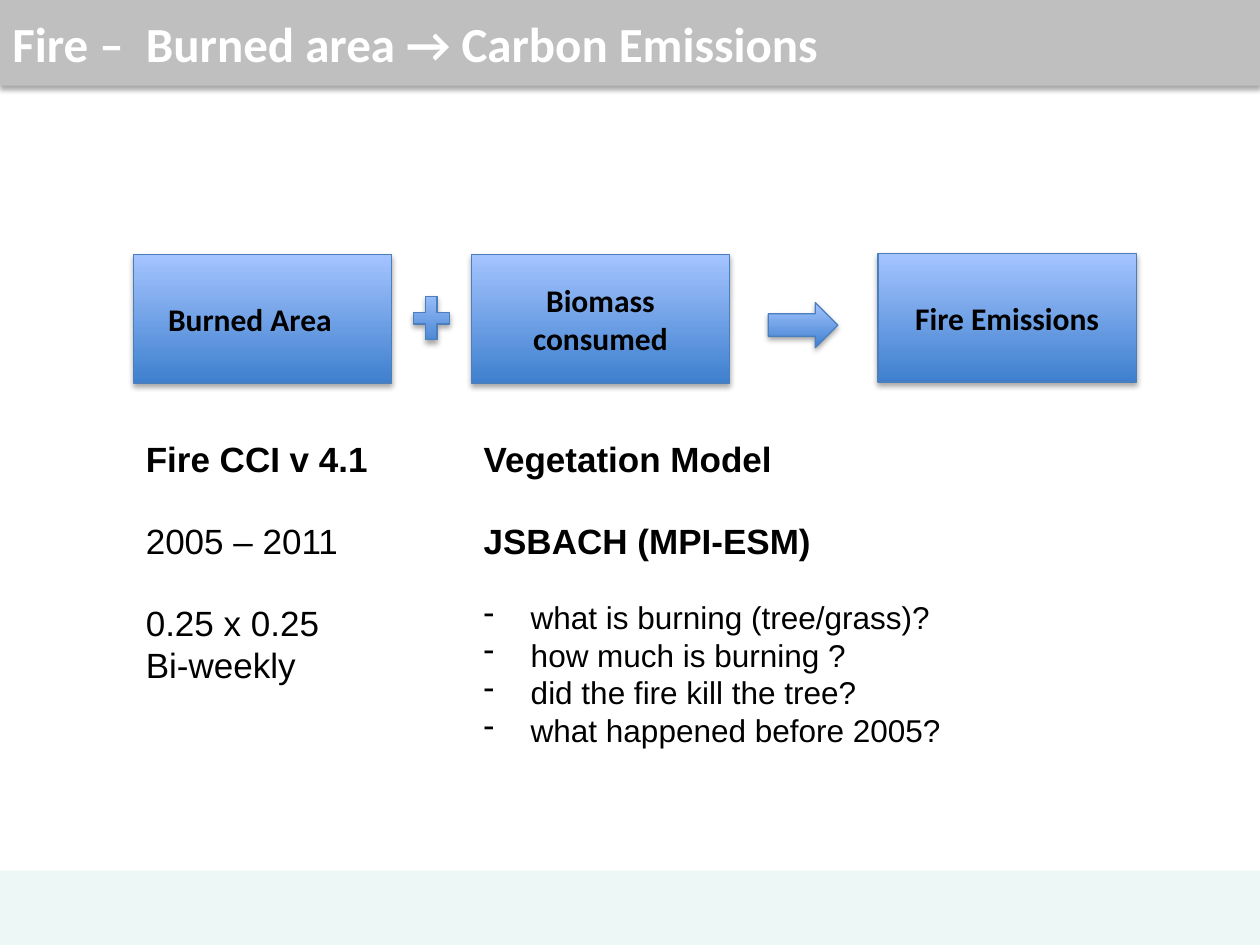
from lxml import etree
from pptx import Presentation
from pptx import util as u
from pptx.dml import color as col
from pptx.enum import shapes, text
from pptx.oxml import ns

HUE = {"bar": "BFBFBF", "foot": "EDF8F6", "deep": "3F80CE", "pale": "A4C4FF",
       "edge": "4B7EBC", "ink": "000000", "white": "FFFFFF"}
RGB = {name: col.RGBColor.from_string(code) for name, code in HUE.items()}
KIND = shapes.MSO_SHAPE

deck = Presentation()
deck.slide_width, deck.slide_height = u.Cm(25.4), u.Cm(19.05)
slide = deck.slides.add_slide(deck.slide_layouts[6])


def draw(kind, left, top, width, height, fill=None, shade=True):
    """Add a shape: flat if a fill is named, else a blue gradient with an edge."""
    shape = slide.shapes.add_shape(kind, *map(u.Cm, (left, top, width, height)))
    shape.shadow.inherit = False
    if fill:
        shape.fill.solid()
        shape.fill.fore_color.rgb = RGB[fill]
        shape.line.fill.background()
    else:
        shape.fill.gradient()
        shape.fill.gradient_angle = 90
        for stop, name in zip(shape.fill.gradient_stops, ("deep", "pale")):
            stop.color.rgb = RGB[name]
        shape.line.color.rgb = RGB["edge"]
        shape.line.width = u.Pt(0.75)
    if shade:
        effect = shape.element.spPr.find(ns.qn("a:effectLst"))
        outer = etree.SubElement(effect, ns.qn("a:outerShdw"), blurRad="40000",
                                 dist="23000", dir="5400000", rotWithShape="0")
        tint = etree.SubElement(outer, ns.qn("a:srgbClr"), val=HUE["ink"])
        etree.SubElement(tint, ns.qn("a:alpha"), val="35000")
    return shape


def style(para, face, size, bold, ink="ink"):
    font = para.font
    font.name, font.size, font.bold = face, u.Pt(size), bold
    font.color.rgb = RGB[ink]


# Footer band and title bar
draw(KIND.RECTANGLE, 0, 17.55, 25.4, 1.5, "foot", shade=False)
bar = draw(KIND.RECTANGLE, 0, 0, 25.4, 1.73, "bar")
para = bar.text_frame.paragraphs[0]
para.text = "Fire –  Burned area → Carbon Emissions"
para.alignment = text.PP_ALIGN.LEFT
style(para, "Calibri", 28, True, "white")

# Boxes of the flow; the first label sits a little left of centre
for label, left, top, inset in (("Burned Area", 2.69, 5.13, 0.76),
                                ("Biomass consumed", 9.5, 5.13, 0.25),
                                ("Fire Emissions", 17.7, 5.11, 0.25)):
    box = draw(KIND.RECTANGLE, left, top, 5.21, 2.59)
    box.text_frame.margin_right = u.Cm(inset)
    para = box.text_frame.paragraphs[0]
    para.text = label
    para.alignment = text.PP_ALIGN.CENTER
    style(para, "Calibri", 18, True)

# Signs between the boxes
draw(KIND.MATH_PLUS, 8.2, 5.82, 0.99, 1.19)
draw(KIND.RIGHT_ARROW, 15.49, 6.1, 1.4, 0.91)

# Notes below: text, size, bold, space before, dash
model = [("Vegetation Model", 20, True, 0, False),
         ("JSBACH (MPI-ESM)", 20, True, 23, False),
         ("what is burning (tree/grass)?", 18, False, 20.7, True),
         ("how much is burning ?", 18, False, 0, True),
         ("did the fire kill the tree?", 18, False, 0, True),
         ("what happened before 2005?", 18, False, 0, True)]
data = [("Fire CCI v 4.1", 20, True, 0, False),
        ("2005 – 2011", 20, False, 23, False),
        ("0.25 x 0.25", 20, False, 23, False),
        ("Bi-weekly", 20, False, 0, False)]
for left, width, height, lines in ((9.5, 10.5, 6.7, model), (2.69, 6, 5.4, data)):
    note = slide.shapes.add_textbox(*map(u.Cm, (left, 8.69, width, height)))
    frame = note.text_frame
    frame.word_wrap = True
    for i, (words, size, bold, gap, dash) in enumerate(lines):
        para = frame.add_paragraph() if i else frame.paragraphs[0]
        para.text = words
        if gap:
            para.space_before = u.Pt(gap)
        if dash:
            props = para._p.get_or_add_pPr()
            props.set("marL", str(u.Cm(0.95)))
            props.set("indent", str(u.Cm(-0.95)))
            etree.SubElement(props, ns.qn("a:buChar"), char="-")
        style(para, "Arial", size, bold)

deck.save("out.pptx")
